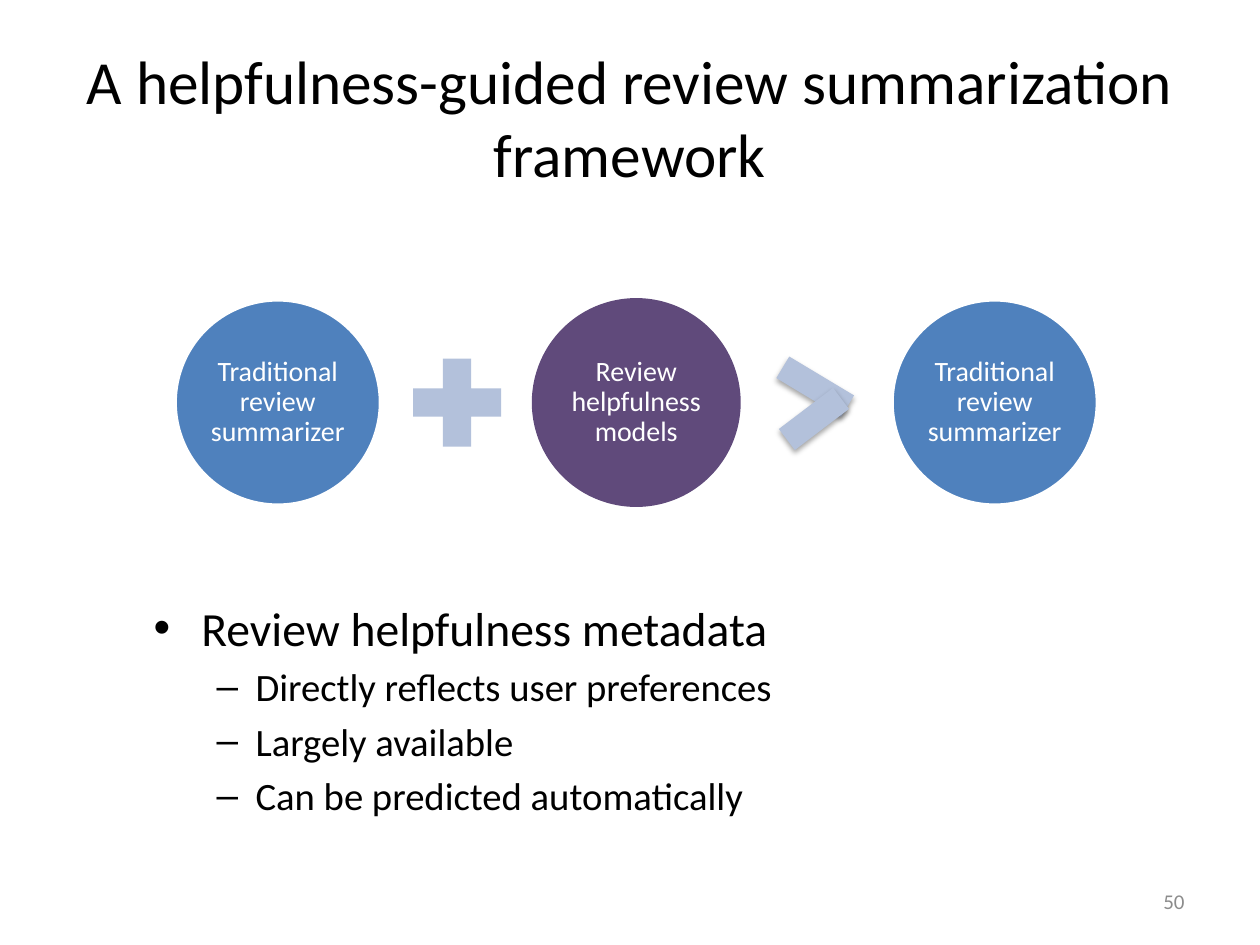
from lxml import etree
from pptx import Presentation
from pptx.dml.color import RGBColor
from pptx.enum.shapes import MSO_SHAPE
from pptx.enum.text import MSO_ANCHOR, PP_ALIGN
from pptx.oxml import parse_xml
from pptx.oxml.ns import nsdecls, qn
from pptx.util import Inches, Pt

OVAL, PLUS, BAR = MSO_SHAPE.OVAL, MSO_SHAPE.MATH_PLUS, MSO_SHAPE.RECTANGLE
MIDDLE, TOP = MSO_ANCHOR.MIDDLE, MSO_ANCHOR.TOP
LEFT, CENTER, RIGHT = PP_ALIGN.LEFT, PP_ALIGN.CENTER, PP_ALIGN.RIGHT

BLACK = RGBColor(0x00, 0x00, 0x00)
WHITE = RGBColor(0xFF, 0xFF, 0xFF)
GRAY = RGBColor(0x8C, 0x8C, 0x8C)
BLUE = RGBColor(0x4F, 0x81, 0xBD)
PURPLE = RGBColor(0x60, 0x4A, 0x7B)
PALE_BLUE = RGBColor(0xB3, 0xC1, 0xDB)

FONT = "Calibri"
TITLE = "A helpfulness-guided review summarization framework"
PAGE_NUMBER = "50"
STAGES = [
    ("Traditional review summarizer", BLUE, WHITE),
    ("Review helpfulness models", PURPLE, PURPLE),
    ("Traditional review summarizer", BLUE, WHITE),
]
ARROW_BARS = [(6.17, 2.97, 0.6, 0.2, 31), (6.19, 3.22, 0.54, 0.21, 322.8)]
BULLETS = [
    ("Review helpfulness metadata", 0),
    ("Directly reflects user preferences", 1),
    ("Largely available", 1),
    ("Can be predicted automatically", 1),
]
LEVELS = [
    {"size": 27.2, "before": 0, "margin": 0.38, "hanging": 0.38, "mark": "•"},
    {"size": 22.1, "before": 4.4, "margin": 0.81, "hanging": 0.31, "mark": "–"},
]

STAGE_LEFT, STAGE_TOP, STAGE_SIZE, STAGE_PITCH = 1.39, 2.38, 1.63, 2.845
PLUS_SIZE = 0.95
SHADOW = (
    f'<a:effectLst {nsdecls("a")}><a:outerShdw blurRad="{Pt(3.1)}" dist="{Pt(1.8)}" '
    'dir="5400000" rotWithShape="0"><a:srgbClr val="000000"><a:alpha val="35000"/>'
    "</a:srgbClr></a:outerShdw></a:effectLst>"
)


def set_format(target, values):
    for name, value in values.items():
        setattr(target, name, value)


def write(paragraph, text, size, color, alignment):
    paragraph.alignment = alignment
    run = paragraph.add_run()
    run.text = text
    set_format(run.font, {"name": FONT, "size": Pt(size)})
    run.font.color.rgb = color


def add_text_box(slide, box, anchor):
    frame = slide.shapes.add_textbox(*map(Inches, box)).text_frame
    set_format(frame, {"word_wrap": True, "vertical_anchor": anchor})
    return frame


def add_filled_shape(slide, kind, box, fill, outline=None):
    shape = slide.shapes.add_shape(kind, *map(Inches, box))
    shape.shadow.inherit = False
    shape.fill.solid()
    shape.fill.fore_color.rgb = fill
    if outline is None:
        shape.line.fill.background()
    else:
        shape.line.color.rgb = outline
        shape.line.width = Pt(2)
    return shape


def add_stages(slide):
    for index, (label, fill, outline) in enumerate(STAGES):
        left = STAGE_LEFT + index * STAGE_PITCH
        box = (left, STAGE_TOP, STAGE_SIZE, STAGE_SIZE)
        frame = add_filled_shape(slide, OVAL, box, fill, outline).text_frame
        set_format(frame, {"word_wrap": True, "vertical_anchor": MIDDLE})
        sides = ("margin_left", "margin_top", "margin_right", "margin_bottom")
        set_format(frame, dict.fromkeys(sides, Inches(0.02)))
        paragraph = frame.paragraphs[0]
        paragraph.line_spacing = 0.9
        write(paragraph, label, 16, WHITE, CENTER)


def add_operators(slide):
    plus_left = STAGE_LEFT + (STAGE_PITCH + STAGE_SIZE - PLUS_SIZE) / 2
    plus_top = STAGE_TOP + (STAGE_SIZE - PLUS_SIZE) / 2
    add_filled_shape(slide, PLUS, (plus_left, plus_top, PLUS_SIZE, PLUS_SIZE), PALE_BLUE)
    for *box, rotation in ARROW_BARS:
        bar = add_filled_shape(slide, BAR, box, PALE_BLUE)
        bar.rotation = rotation
        properties = bar.element.spPr
        properties.replace(properties.find(qn("a:effectLst")), parse_xml(SHADOW))


def add_bullets(slide):
    frame = add_text_box(slide, (1.12, 4.7, 7.85, 1.65), TOP)
    for index, (text, level) in enumerate(BULLETS):
        paragraph = frame.add_paragraph() if index else frame.paragraphs[0]
        style = LEVELS[level]
        set_format(paragraph, {"level": level, "space_before": Pt(style["before"])})
        write(paragraph, text, style["size"], BLACK, LEFT)
        properties = paragraph._p.get_or_add_pPr()
        properties.set("marL", str(Inches(style["margin"])))
        properties.set("indent", str(-Inches(style["hanging"])))
        etree.SubElement(properties, qn("a:buFont"), typeface="Arial")
        etree.SubElement(properties, qn("a:buChar"), char=style["mark"])


def main():
    presentation = Presentation()
    set_format(presentation, {"slide_width": Inches(10), "slide_height": Inches(7.5)})
    slide = presentation.slides.add_slide(presentation.slide_layouts[6])
    title = add_text_box(slide, (0.5, 0.3, 9, 1.25), MIDDLE)
    write(title.paragraphs[0], TITLE, 35, BLACK, CENTER)
    add_bullets(slide)
    add_stages(slide)
    add_operators(slide)
    number = add_text_box(slide, (7.17, 6.95, 2.33, 0.4), MIDDLE)
    write(number.paragraphs[0], PAGE_NUMBER, 12, GRAY, RIGHT)
    presentation.save("out.pptx")


if __name__ == "__main__":
    main()
